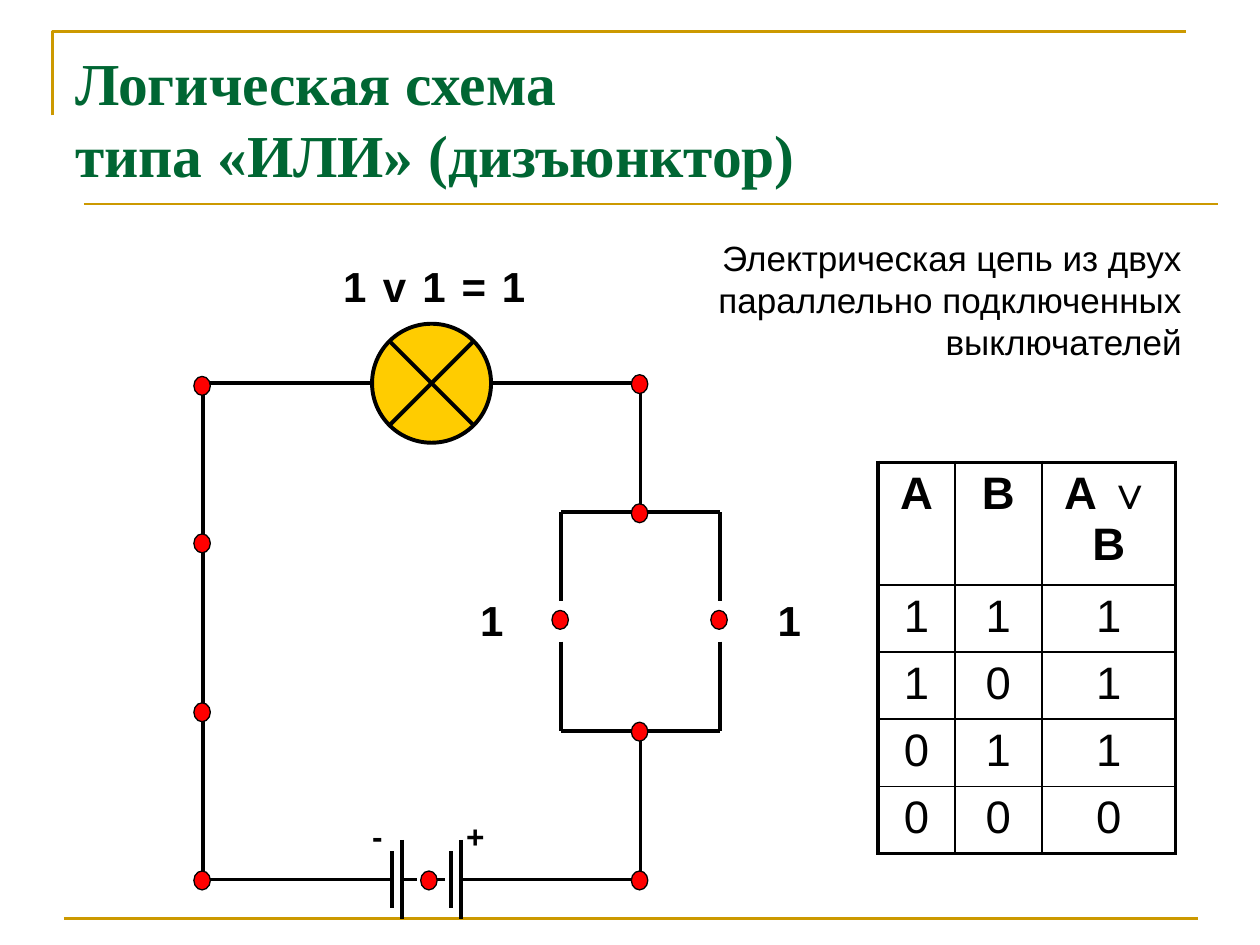
from dataclasses import dataclass

from lxml import etree
from pptx import Presentation
from pptx.dml.color import RGBColor
from pptx.enum import dml, shapes, text
from pptx.oxml import ns
from pptx.util import Pt


@dataclass(frozen=True)
class Theme:
    gold: str = "CC9900"
    green: str = "006633"
    black: str = "000000"
    red: str = "FF0000"
    yellow: str = "FFCC00"
    serif: str = "Times New Roman"
    sans: str = "Arial"
    title: float = 34
    table: float = 26
    label: float = 24
    caption: float = 20
    sign: float = 18
    thin: float = 1
    rule: float = 1.5
    wire: float = 2.25


@dataclass(frozen=True)
class Box:
    left: float
    top: float
    width: float
    height: float

    @property
    def right(self):
        return self.left + self.width

    @property
    def bottom(self):
        return self.top + self.height

    @property
    def lengths(self):
        return Pt(self.left), Pt(self.top), Pt(self.width), Pt(self.height)


THEME = Theme()


def color(value):
    return RGBColor.from_string(value)


def style_runs(paragraph, size, bold=False, ink=THEME.black, font=THEME.sans):
    for run in paragraph.runs:
        run.font.size = Pt(size)
        run.font.bold = bold
        run.font.name = font
        run.font.color.rgb = color(ink)


def add_line(slide, x1, y1, x2, y2, ink=THEME.black, width=THEME.wire):
    line = slide.shapes.add_connector(
        shapes.MSO_CONNECTOR.STRAIGHT, Pt(x1), Pt(y1), Pt(x2), Pt(y2))
    line.line.color.rgb = color(ink)
    line.line.width = Pt(width)
    etree.SubElement(line._element.spPr, ns.qn("a:effectLst"))
    return line


def add_round(slide, kind, x, y, width, height, fill, line_width):
    """Add an outlined round shape centred on a point."""
    shape = slide.shapes.add_shape(
        kind, Pt(x - width / 2), Pt(y - height / 2), Pt(width), Pt(height))
    shape.shadow.inherit = False
    shape.fill.solid()
    shape.fill.fore_color.rgb = color(fill)
    shape.line.color.rgb = color(THEME.black)
    shape.line.width = Pt(line_width)


def add_text(slide, box, wording, size, align, **style):
    frame = slide.shapes.add_textbox(*box.lengths).text_frame
    frame.word_wrap = True
    paragraph = frame.paragraphs[0]
    paragraph.text = wording
    paragraph.alignment = align
    style_runs(paragraph, size, **style)
    return frame


def add_label(slide, x, top, wording, size):
    """Add a bold label centred on x."""
    frame = add_text(slide, Box(x - 14, top, 28, size * 1.5), wording, size,
                     text.PP_ALIGN.CENTER, bold=True)
    frame.margin_left = frame.margin_right = 0
    frame.paragraphs[0].space_before = Pt(2)


def add_frame(slide, box):
    """Draw the gold corner and the two gold rules."""
    builder = slide.shapes.build_freeform(Pt(box.left), Pt(box.top + 48))
    builder.add_line_segments(
        [(Pt(box.left), Pt(box.top)), (Pt(box.right), Pt(box.top))], close=False)
    corner = builder.convert_to_shape()
    corner.shadow.inherit = False
    corner.fill.background()
    corner.line.color.rgb = color(THEME.gold)
    corner.line.width = Pt(THEME.rule)
    for indent, y in ((18, box.top + 98.6), (6.5, box.bottom)):
        add_line(slide, box.left + indent, y, box.right + indent, y,
                 THEME.gold, THEME.rule)


def add_title(slide, box):
    frame = add_text(slide, box, "Логическая схема\nтипа «ИЛИ» (дизъюнктор)",
                     THEME.title, text.PP_ALIGN.LEFT, bold=True,
                     ink=THEME.green, font=THEME.serif)
    frame.vertical_anchor = text.MSO_ANCHOR.BOTTOM


def add_battery(slide, box):
    middle_x = box.left + box.width / 2
    middle_y = box.top + box.height / 2
    for x in (box.left, box.right - 5.7):
        add_line(slide, x, box.top + 6.5, x, box.bottom - 6.5)
        add_line(slide, x + 5.7, box.top, x + 5.7, box.bottom)
    cells = add_line(slide, box.left + 5.7, middle_y, box.right - 5.7, middle_y)
    cells.line.dash_style = dml.MSO_LINE.DASH
    for x, sign in ((middle_x - 28, "-"), (middle_x + 28, "+")):
        add_label(slide, x, box.top - 16.6, sign, THEME.sign)


def add_switches(slide, box):
    """Draw two parallel branches, each with an open gap and its value."""
    middle_y = box.top + box.height / 2
    for y in (box.top, box.bottom):
        add_line(slide, box.left, y, box.right, y)
    for x, side in ((box.left, -1), (box.right, 1)):
        add_line(slide, x, box.top, x, middle_y - 11.5)
        add_line(slide, x, middle_y + 11.5, x, box.bottom)
        add_label(slide, x + side * 39.6, middle_y - 19, "1", THEME.label)


def add_circuit(slide, box):
    lamp_x, lamp_radius = box.left + 130.6, 34
    battery = Box(lamp_x - 22.7, box.bottom - 22.7, 39.6, 45.4)
    switches = Box(box.right - 45.4, box.top + 73.8, 90.8, 124.8)

    wires = [
        (box.left, box.top, lamp_x - lamp_radius, box.top),
        (lamp_x + lamp_radius, box.top, box.right, box.top),
        (box.left, box.top, box.left, box.bottom),
        (box.right, box.top, box.right, switches.top),
        (box.right, switches.bottom, box.right, box.bottom),
        (box.left, box.bottom, battery.left, box.bottom),
        (battery.right, box.bottom, box.right, box.bottom),
    ]
    for wire in wires:
        add_line(slide, *wire)
    add_battery(slide, battery)
    add_switches(slide, switches)

    gap_y = switches.top + switches.height / 2 - 1.5
    dots = [(box.left, box.top + y) for y in (1, 91, 187.5, box.height)]
    dots += [(box.right, y) for y in
             (box.top, switches.top, switches.bottom, box.bottom)]
    dots += [(switches.left, gap_y), (switches.right, gap_y),
             (lamp_x - 1, box.bottom)]
    for x, y in dots:
        add_round(slide, shapes.MSO_SHAPE.OVAL, x - 0.5, y + 0.5,
                  9.4, 10.8, THEME.red, 0.75)

    add_round(slide, shapes.MSO_SHAPE.FLOWCHART_SUMMING_JUNCTION, lamp_x, box.top,
              2 * lamp_radius, 2 * lamp_radius, THEME.yellow, THEME.wire)
    for index, symbol in enumerate("1v1=1"):
        add_label(slide, lamp_x + (index - 2) * 22.7 + 1.5, box.top - 73.5,
                  symbol, THEME.label)


def set_border(cell, side, width):
    border = etree.SubElement(cell._tc.get_or_add_tcPr(), ns.qn(f"a:ln{side}"),
                              w=str(Pt(width)))
    fill = etree.SubElement(border, ns.qn("a:solidFill"))
    etree.SubElement(fill, ns.qn("a:srgbClr"), val=THEME.black)


def add_truth_table(slide, box):
    rows = [("A", "B", "A ∨ B")]
    rows += [(a, b, a | b) for a in (1, 0) for b in (1, 0)]
    widths = (43.9, 49.7, box.width - 93.6)
    header_height = 70
    row_height = (box.height - header_height) / (len(rows) - 1)
    table = slide.shapes.add_table(len(rows), len(widths), *box.lengths).table
    for column, width in zip(table.columns, widths):
        column.width = Pt(width)
    for r, values in enumerate(rows):
        table.rows[r].height = Pt(row_height if r else header_height)
        for c, value in enumerate(values):
            cell = table.cell(r, c)
            outer = {"L": c == 0, "R": c == len(widths) - 1,
                     "T": r == 0, "B": r == len(rows) - 1}
            for side, is_outer in outer.items():
                set_border(cell, side, THEME.wire if is_outer else THEME.thin)
            cell.fill.background()
            paragraph = cell.text_frame.paragraphs[0]
            paragraph.text = str(value)
            paragraph.alignment = text.PP_ALIGN.CENTER
            style_runs(paragraph, THEME.table, bold=r == 0)


def add_caption(slide, box):
    add_text(slide, box,
             "Электрическая цепь из двух\nпараллельно подключенных\nвыключателей",
             THEME.caption, text.PP_ALIGN.RIGHT)


def main():
    presentation = Presentation()
    presentation.slide_width, presentation.slide_height = Pt(720), Pt(540)
    slide = presentation.slides.add_slide(presentation.slide_layouts[6])
    add_frame(slide, Box(30, 18, 648, 507))
    add_title(slide, Box(36, 21.6, 648, 90))
    add_circuit(slide, Box(116, 219, 250, 283.6))
    add_truth_table(slide, Box(501.8, 264.2, 170, 223.6))
    add_caption(slide, Box(397.4, 131.8, 285, 79.2))
    presentation.save("out.pptx")


if __name__ == "__main__":
    main()
